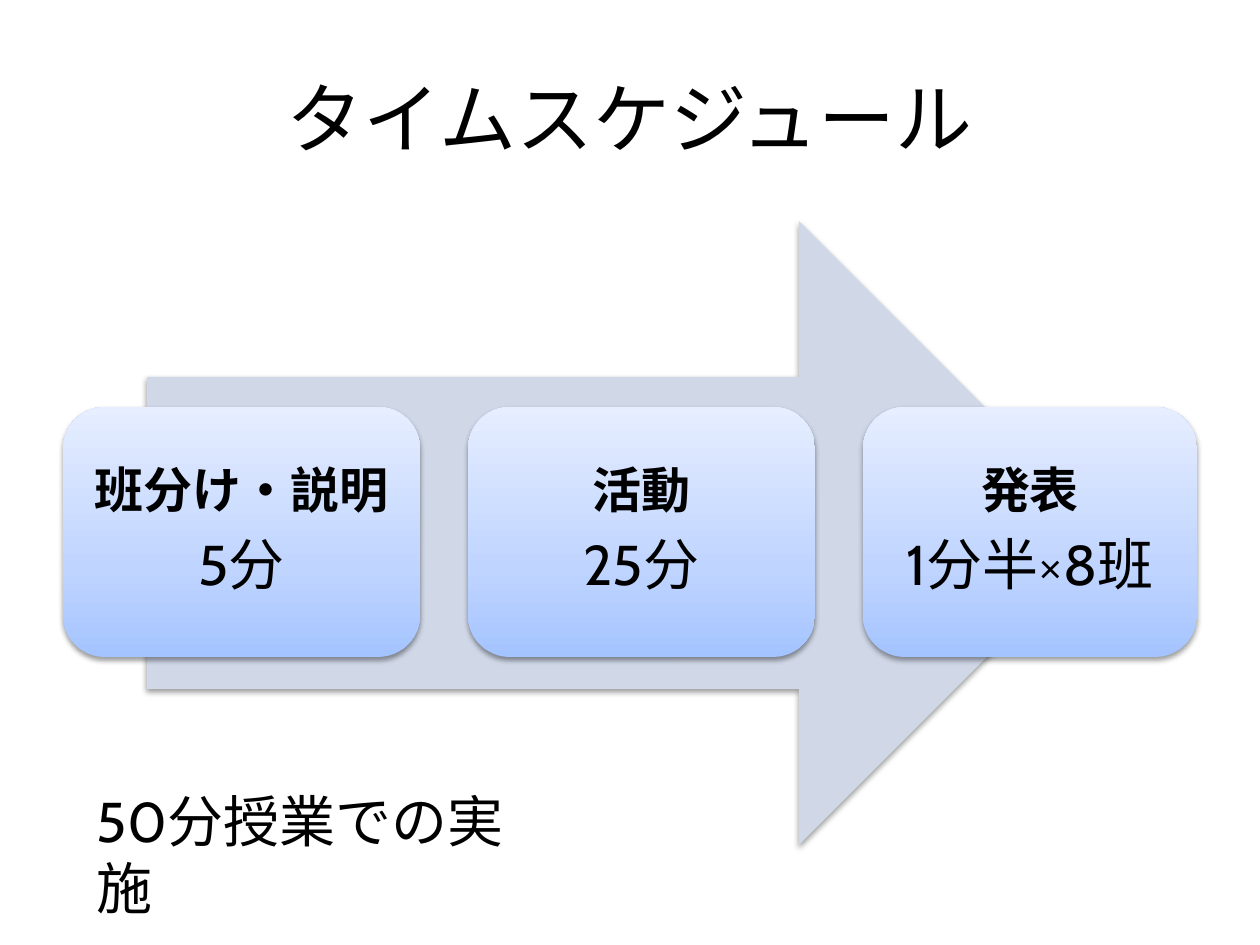
from copy import deepcopy

from lxml.etree import SubElement
from pptx import Presentation
from pptx.dml.color import RGBColor
from pptx.enum.shapes import MSO_SHAPE
from pptx.enum.text import MSO_ANCHOR, PP_ALIGN
from pptx.oxml.ns import qn
from pptx.util import Pt

SCALE = 914400 / 126
THEME = {
    "font": "Cabin",
    "text": "000000",
    "arrow": "D0D8E8",
    "gradient": [(0, "A4C4FF"), (0.35, "BFD4FF"), (1, "E6EEFF")],
    "title": 44,
    "body": 32,
    "heading": 28,
}


def px(*lengths):
    return [round(length * SCALE) for length in lengths]


def write(box, lines, align=PP_ALIGN.LEFT, anchor=MSO_ANCHOR.TOP,
          margins=(13, 6), line_spacing=None, space_after=None):
    frame = box.text_frame
    frame.word_wrap = True
    frame.vertical_anchor = anchor
    frame.margin_left = frame.margin_right = px(margins[0])[0]
    frame.margin_top = frame.margin_bottom = px(margins[1])[0]
    for index, (text, size, bold) in enumerate(lines):
        para = frame.add_paragraph() if index else frame.paragraphs[0]
        para.alignment = align
        para.line_spacing = line_spacing
        para.space_after = space_after
        span = para.add_run()
        span.text = text
        span.font.name = THEME["font"]
        span.font.size = Pt(size)
        span.font.bold = bold
        span.font.color.rgb = RGBColor.from_string(THEME["text"])


deck = Presentation()
deck.slide_width, deck.slide_height = px(1260, 945)
page = deck.slides.add_slide(deck.slide_layouts[6])

title = page.shapes.add_textbox(*px(63, 38, 1134, 158))
write(title, [("タイムスケジュール", THEME["title"], False)],
      align=PP_ALIGN.CENTER, anchor=MSO_ANCHOR.MIDDLE)

arrow = page.shapes.add_shape(MSO_SHAPE.RIGHT_ARROW, *px(147, 221, 964, 624))
arrow.fill.solid()
arrow.fill.fore_color.rgb = RGBColor.from_string(THEME["arrow"])
shapes = [arrow]

steps = [
    ("班分け・説明", "5分", 357),
    ("活動", "25分", 347),
    ("発表", "1分半×8班", 334),
]
left, gap = 63, 48
for heading, duration, width in steps:
    card = page.shapes.add_shape(MSO_SHAPE.ROUNDED_RECTANGLE, *px(left, 407, width, 250))
    card.fill.gradient()
    card.fill.gradient_angle = 90
    stop_list = card.element.spPr.find(qn("a:gradFill")).find(qn("a:gsLst"))
    stop_list.insert(1, deepcopy(stop_list[0]))
    for stop, (position, color) in zip(card.fill.gradient_stops, THEME["gradient"]):
        stop.position = position
        stop.color.rgb = RGBColor.from_string(color)
    write(card, [(heading, THEME["heading"], True), (duration, THEME["body"], False)],
          align=PP_ALIGN.CENTER, anchor=MSO_ANCHOR.MIDDLE, margins=(15, 15),
          line_spacing=0.9, space_after=Pt(10))
    shapes.append(card)
    left += width + gap

for shape in shapes:
    shape.line.fill.background()
    shape.shadow.inherit = False
    effects = shape.element.spPr.find(qn("a:effectLst"))
    shadow = SubElement(effects, qn("a:outerShdw"), blurRad=str(Pt(3.1)),
                        dist=str(Pt(1.6)), dir="5400000", rotWithShape="0")
    shade = SubElement(shadow, qn("a:srgbClr"), val=THEME["text"])
    SubElement(shade, qn("a:alpha"), val="38000")

note = page.shapes.add_textbox(*px(84, 780, 483, 81))
write(note, [("50分授業での実施", THEME["body"], False)])

deck.save("out.pptx")
